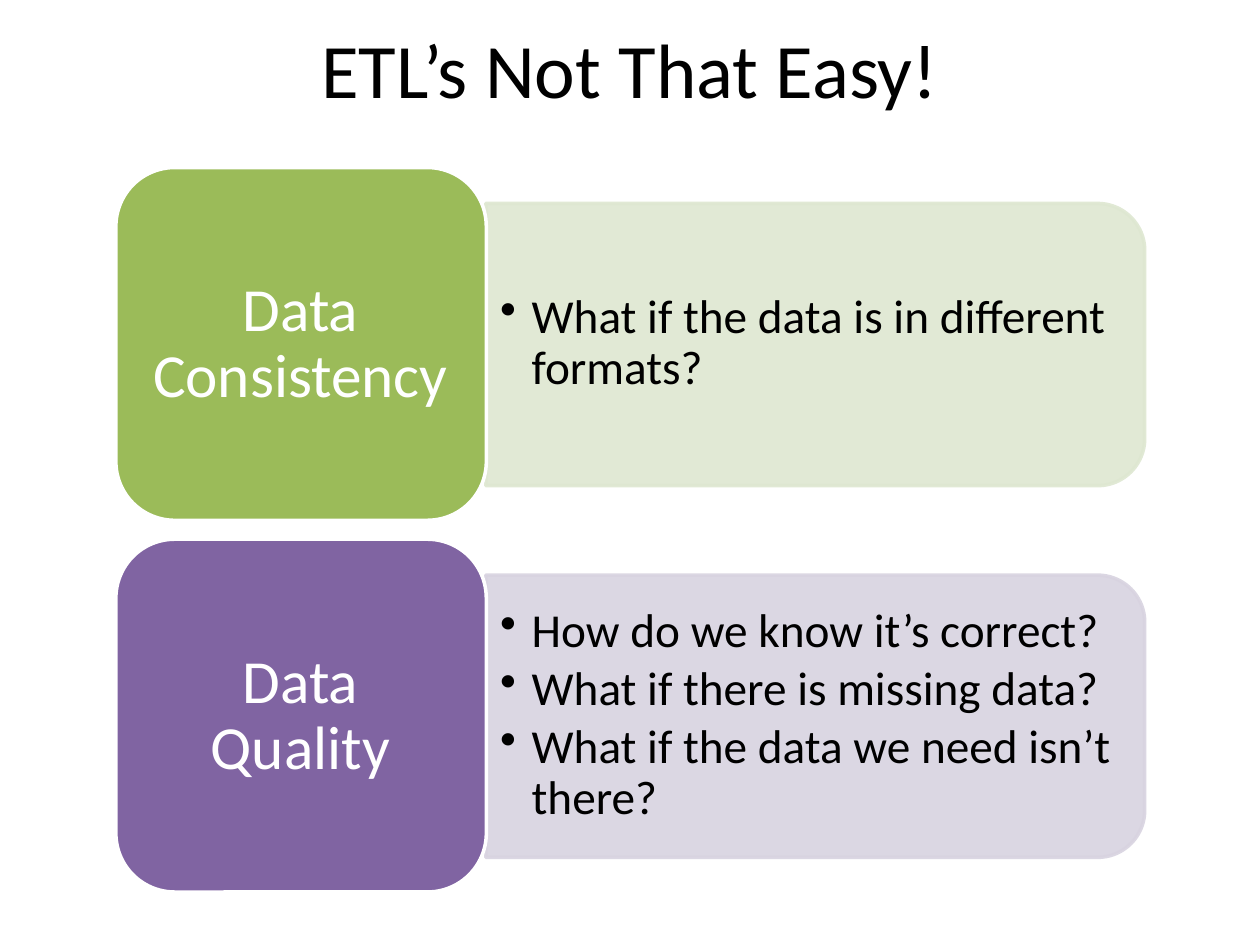
"""Build the slide on data consistency and quality in ETL."""
from dataclasses import dataclass

from lxml.etree import SubElement
from pptx import Presentation
from pptx.dml.color import RGBColor
from pptx.enum.shapes import MSO_SHAPE
from pptx.enum.text import MSO_ANCHOR, PP_ALIGN
from pptx.oxml.ns import qn
from pptx.util import Inches, Pt

BLACK = RGBColor(0x00, 0x00, 0x00)
WHITE = RGBColor(0xFF, 0xFF, 0xFF)
GREEN = RGBColor(0x9B, 0xBB, 0x59)
PALE_GREEN = RGBColor(0xDE, 0xE7, 0xD1)
PURPLE = RGBColor(0x80, 0x64, 0xA2)
PALE_PURPLE = RGBColor(0xD8, 0xD3, 0xE0)

COLS, ROWS = 100, 75
WIDTH, HEIGHT = Inches(10), Inches(7.5)
FIRST_ROW, ROW_PITCH = 13.3, 29.5


@dataclass(frozen=True)
class Box:
    """A rectangle in grid columns and rows."""
    col: float
    row: float
    cols: float
    rows: float

    def down(self, rows: float) -> "Box":
        """Return this box moved down by some rows."""
        return Box(self.col, self.row + rows, self.cols, self.rows)

    def emu(self) -> tuple[int, int, int, int]:
        """Return left, top, width and height on the slide."""
        cw, rh = WIDTH / COLS, HEIGHT / ROWS
        return (round(self.col * cw), round(self.row * rh),
                round(self.cols * cw), round(self.rows * rh))


@dataclass(frozen=True)
class TextStyle:
    """The look of a block of text."""
    size: float
    color: RGBColor
    align: PP_ALIGN = PP_ALIGN.CENTER
    spacing: float = 1.0
    after: float = 0
    inset: tuple[float, float] = (0.1, 0.05)
    bullet: bool = False


@dataclass(frozen=True)
class Topic:
    """A heading tile with its questions."""
    heading: str
    questions: tuple[str, ...]
    color: RGBColor
    pale: RGBColor


TITLE = Box(5, 0, 90, 10.8)
PANEL = Box(53.5, -12.1, 22.4, 52.3)
QUESTIONS = Box(38.6, 3.9, 51.2, 20.2)
TILE = Box(9.2, 0, 29.4, 28)
HEADING = Box(10.5, 1.4, 26.7, 25.3)

TITLE_STYLE = TextStyle(44, BLACK)
HEADING_STYLE = TextStyle(35, WHITE, spacing=0.9, after=12.25, inset=(0.15, 0.07))
QUESTION_STYLE = TextStyle(27, BLACK, PP_ALIGN.LEFT, 0.9, 4.05, (0.11, 0.06), True)

TOPICS = (
    Topic("Data Consistency", ("What if the data is in different formats?",),
          GREEN, PALE_GREEN),
    Topic("Data Quality",
          ("How do we know it’s correct?", "What if there is missing data?",
           "What if the data we need isn’t there?"),
          PURPLE, PALE_PURPLE),
)


def add_text(s, box: Box, lines: tuple[str, ...], style: TextStyle) -> None:
    """Add a text box with one paragraph a line."""
    tf = s.shapes.add_textbox(*box.emu()).text_frame
    tf.word_wrap = True
    tf.vertical_anchor = MSO_ANCHOR.MIDDLE
    tf.margin_left = tf.margin_right = Inches(style.inset[0])
    tf.margin_top = tf.margin_bottom = Inches(style.inset[1])
    for i, line in enumerate(lines):
        p = tf.add_paragraph() if i else tf.paragraphs[0]
        p.alignment = style.align
        p.line_spacing = style.spacing
        p.space_after = Pt(style.after)
        if style.bullet:
            pPr = p._p.get_or_add_pPr()
            pPr.set("marL", str(Inches(0.25)))
            pPr.set("indent", str(Inches(-0.25)))
            SubElement(pPr, qn("a:buChar")).set("char", "•")
        r = p.add_run()
        r.text = line
        r.font.name = "Calibri"
        r.font.size = Pt(style.size)
        r.font.color.rgb = style.color


def add_block(s, kind: MSO_SHAPE, box: Box, fill: RGBColor, line: RGBColor):
    """Add a filled shape with a 2 pt outline."""
    sp = s.shapes.add_shape(kind, *box.emu())
    sp.shadow.inherit = False
    sp.fill.solid()
    sp.fill.fore_color.rgb = fill
    sp.line.color.rgb = line
    sp.line.width = Pt(2)
    return sp


def add_topic(s, topic: Topic, row: float) -> None:
    """Add a panel of questions and the tile that heads it."""
    panel = add_block(s, MSO_SHAPE.ROUND_2_SAME_RECTANGLE, PANEL.down(row),
                      topic.pale, topic.pale)
    panel.rotation = 90
    for clr in panel._element.spPr.iter(qn("a:srgbClr")):
        SubElement(clr, qn("a:alpha")).set("val", "90000")
    add_text(s, QUESTIONS.down(row), topic.questions, QUESTION_STYLE)
    add_block(s, MSO_SHAPE.ROUNDED_RECTANGLE, TILE.down(row), topic.color, WHITE)
    add_text(s, HEADING.down(row), (topic.heading,), HEADING_STYLE)


def main() -> None:
    """Build and save the slide."""
    prs = Presentation()
    prs.slide_width, prs.slide_height = WIDTH, HEIGHT
    s = prs.slides.add_slide(prs.slide_layouts[6])
    add_text(s, TITLE, ("ETL’s Not That Easy!",), TITLE_STYLE)
    for i, topic in enumerate(TOPICS):
        add_topic(s, topic, FIRST_ROW + i * ROW_PITCH)
    prs.save("out.pptx")


if __name__ == "__main__":
    main()
